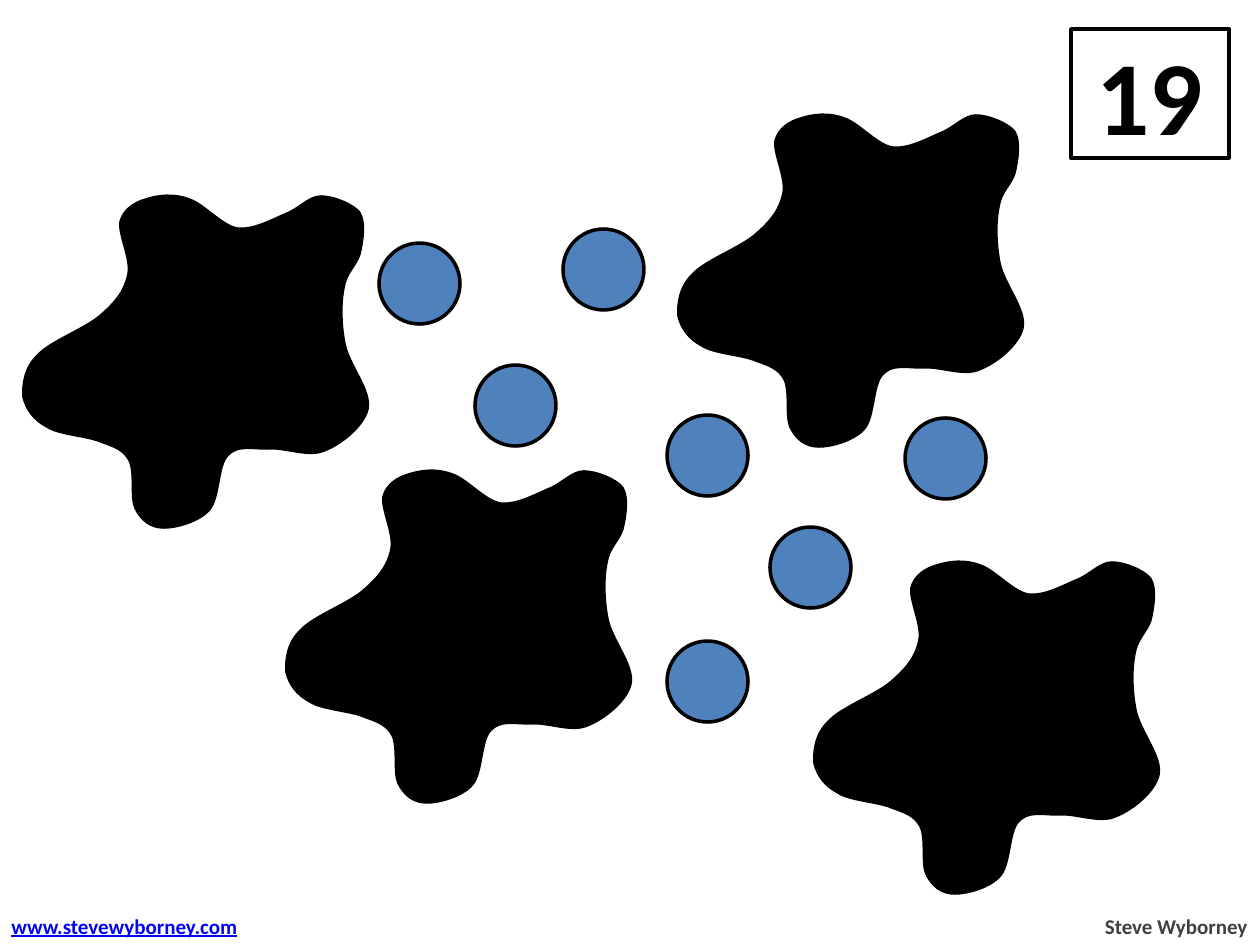
from pptx import Presentation
from pptx import util as u
from pptx.dml.color import RGBColor
from pptx.enum import shapes, text
from pptx.oxml import parse_xml
from pptx.oxml.ns import nsdecls

EMU_PER_PX = 914400 / 126
FONT = "Calibri"
BLACK, WHITE, BLUE = "000000", "FFFFFF", "4F81BD"
LINK_BLUE, GREY = "0000FF", "404040"

DOT_SIZE = 81
DOTS = [
    (338, 616), (563, 229), (155, 229), (517, 626), (667, 641),
    (123, 392), (475, 365), (253, 316), (770, 527), (379, 243),
    (711, 260), (830, 282), (399, 494), (667, 415), (927, 576),
    (973, 692), (834, 707), (905, 418), (905, 158),
]

SPLATS = [(287, 472), (679, 116), (815, 563), (24, 197)]
SPLAT_START = (23, 229)
# Bezier points relative to the splat's corner: two controls and an end per row
SPLAT_CURVES = [
    (10, 222), (3, 212), (0, 200),
    (-1, 189), (1, 171), (14, 159),
    (26, 145), (63, 132), (78, 118),
    (93, 105), (102, 93), (105, 77),
    (108, 62), (95, 37), (97, 25),
    (100, 13), (111, 6), (122, 3),
    (134, -1), (150, -3), (165, 3),
    (180, 8), (197, 29), (213, 32),
    (229, 34), (247, 24), (261, 18),
    (275, 13), (285, 0), (297, 0),
    (309, 0), (329, 8), (335, 16),
    (341, 26), (338, 44), (335, 57),
    (331, 69), (321, 76), (319, 91),
    (316, 105), (316, 127), (320, 147),
    (324, 168), (347, 194), (343, 212),
    (339, 229), (316, 247), (300, 253),
    (284, 260), (260, 249), (243, 251),
    (227, 251), (213, 247), (203, 258),
    (193, 268), (195, 300), (185, 312),
    (175, 324), (152, 330), (140, 330),
    (127, 330), (118, 323), (112, 311),
    (107, 300), (112, 275), (106, 263),
    (100, 252), (91, 249), (77, 244),
    (63, 238), (35, 237), SPLAT_START,
]


def px(length):
    return u.Emu(round(length * EMU_PER_PX))


def color(value):
    return RGBColor.from_string(value)


def style(shape, fill):
    shape.shadow.inherit = False
    shape.fill.solid()
    shape.fill.fore_color.rgb = color(fill)
    shape.line.color.rgb = color(BLACK)
    shape.line.width = u.Pt(2)


def add_preset(page, kind, left, top, width, height, fill):
    shape = page.shapes.add_shape(kind, px(left), px(top), px(width), px(height))
    style(shape, fill)
    return shape


def write(frame, words, size, tint, align, underline=None):
    para = frame.paragraphs[0]
    para.alignment = align
    span = para.add_run()
    span.text = words
    font = span.font
    font.name, font.size, font.bold = FONT, u.Pt(size), True
    font.underline = underline
    font.color.rgb = color(tint)


def add_footer(page, left, width, words, tint, align, underline=None):
    box = page.shapes.add_textbox(px(left), px(907), px(width), px(38))
    box.text_frame.word_wrap = False
    box.text_frame.auto_size = text.MSO_AUTO_SIZE.SHAPE_TO_FIT_TEXT
    write(box.text_frame, words, 12, tint, align, underline)


def curve_segments(shape):
    """Turn each three straight segments into one cubic Bezier."""
    lines = shape.element.xpath(".//a:lnTo")
    for first in range(0, len(lines), 3):
        curve = parse_xml(f"<a:cubicBezTo {nsdecls('a')}/>")
        lines[first].addprevious(curve)
        for line in lines[first:first + 3]:
            curve.append(line[0])
            line.getparent().remove(line)


def add_splat(page, left, top):
    start, *points = [(px(left + x), px(top + y))
                      for x, y in [SPLAT_START] + SPLAT_CURVES]
    builder = page.shapes.build_freeform(*start)
    builder.add_line_segments(points, close=True)
    splat = builder.convert_to_shape()
    curve_segments(splat)
    style(splat, BLACK)


def main():
    deck = Presentation()
    deck.slide_width, deck.slide_height = px(1260), px(945)
    page = deck.slides.add_slide(deck.slide_layouts[6])

    total = add_preset(page, shapes.MSO_SHAPE.RECTANGLE, 1071, 29, 158, 129, WHITE)
    total.text_frame.vertical_anchor = text.MSO_ANCHOR.MIDDLE
    write(total.text_frame, "19", 60, BLACK, text.PP_ALIGN.CENTER)

    add_footer(page, 1091, 169, "Steve Wyborney", GREY, text.PP_ALIGN.RIGHT)
    add_footer(page, -1, 251, "www.stevewyborney.com", LINK_BLUE,
               text.PP_ALIGN.LEFT, underline=True)

    for left, top in DOTS:
        add_preset(page, shapes.MSO_SHAPE.OVAL, left, top, DOT_SIZE, DOT_SIZE, BLUE)
    for left, top in SPLATS:
        add_splat(page, left, top)

    deck.save("out.pptx")


if __name__ == "__main__":
    main()
